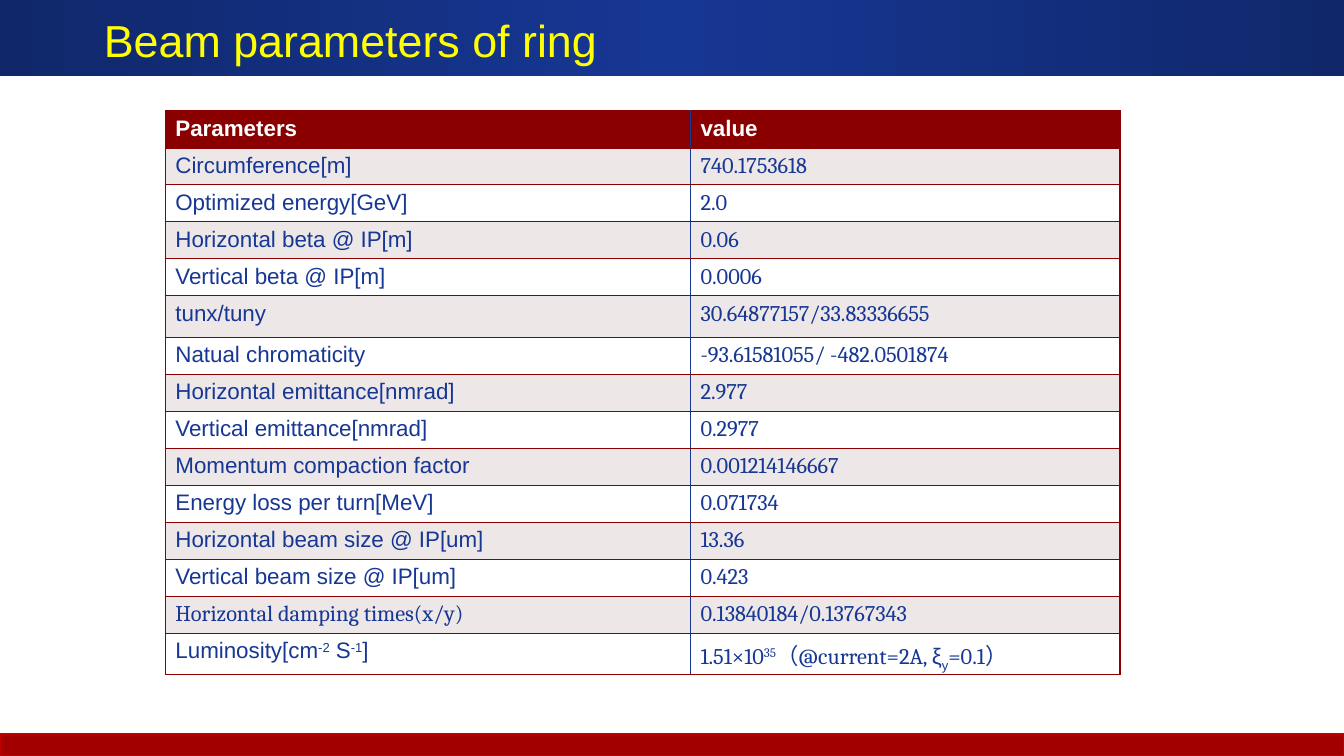
from copy import deepcopy
from dataclasses import dataclass

from lxml.etree import SubElement
from pptx import Presentation
from pptx.dml.color import RGBColor as Rgb
from pptx.enum.shapes import MSO_SHAPE as Preset
from pptx.enum.text import MSO_ANCHOR as Anchor, MSO_AUTO_SIZE as AutoSize, PP_ALIGN as Align
from pptx.oxml.ns import qn
from pptx.util import Inches, Pt


@dataclass(frozen=True)
class Theme:
    yellow: str = "FFFF00"
    white: str = "FFFFFF"
    blue: str = "163794"
    navy: str = "10276A"
    maroon: str = "8A0000"
    red: str = "A20000"
    red_edge: str = "C00000"
    stripe: str = "EDE7E7"
    sans: str = "Arial"
    serif: str = "Cambria"
    title_size: int = 32
    table_size: int = 16


THEME = Theme()
SUPER, SUB = 30, -25

# Each value is plain text or a list of (text, baseline percent, font) runs
PARAMETERS = [
    ("Circumference[m]", "740.1753618"),
    ("Optimized energy[GeV]", "2.0"),
    ("Horizontal beta @ IP[m]", "0.06"),
    ("Vertical beta @ IP[m]", "0.0006"),
    ("tunx/tuny", "30.64877157/33.83336655"),
    ("Natual chromaticity", "-93.61581055/ -482.0501874"),
    ("Horizontal emittance[nmrad]", "2.977"),
    ("Vertical emittance[nmrad]", "0.2977"),
    ("Momentum compaction factor", "0.001214146667"),
    ("Energy loss per turn[MeV]", "0.071734"),
    ("Horizontal beam size @ IP[um]", "13.36"),
    ("Vertical beam size @ IP[um]", "0.423"),
    ([("Horizontal damping times(x/y)", 0, THEME.serif)], "0.13840184/0.13767343"),
    ([("Luminosity[cm", 0, None), ("-2", SUPER, None), (" S", 0, None),
      ("-1", SUPER, None), ("]", 0, None)],
     [("1.51×10", 0, None), ("35", SUPER, None), ("（@current=2A, ", 0, None),
      ("ξ", 0, THEME.sans), ("y", SUB, THEME.sans), ("=0.1）", 0, None)]),
]
TUNE_ROW = 5  # slightly taller than the others


class SlideBuilder:
    def __init__(self, deck, theme):
        self.theme = theme
        self.width, self.height = deck.slide_width, deck.slide_height
        self.slide = deck.slides.add_slide(deck.slide_layouts[5])

    def area(self, left, top, width, height):
        """Turn percentages of the slide into lengths."""
        return [int(share * full / 100) for share, full in
                zip((left, top, width, height), (self.width, self.height) * 2)]

    def style(self, paragraph, size, color, font, bold=False):
        paragraph.alignment = Align.LEFT
        paragraph.font.size = Pt(size)
        paragraph.font.name = font
        paragraph.font.bold = bold
        paragraph.font.color.rgb = Rgb.from_string(color)

    def title(self, text, *area):
        heading = self.slide.shapes.title
        heading.left, heading.top, heading.width, heading.height = self.area(*area)
        frame = heading.text_frame
        frame.text = text
        frame.word_wrap = False
        frame.auto_size = AutoSize.SHAPE_TO_FIT_TEXT
        frame.vertical_anchor = Anchor.MIDDLE
        self.style(frame.paragraphs[0], self.theme.title_size, self.theme.yellow, self.theme.sans)

    def band(self, *area):
        """Add a plain full-width band behind everything else."""
        band = self.slide.shapes.add_shape(Preset.RECTANGLE, *self.area(*area))
        band.shadow.inherit = False
        self.slide.shapes.element.insert(2, band.element)
        return band

    def gradient_band(self, edge, middle, *area):
        band = self.band(*area)
        band.line.fill.background()
        band.fill.gradient()
        band.fill.gradient_angle = 0
        stop_list = band.element.spPr.find(".//" + qn("a:gsLst"))
        stop_list.insert(1, deepcopy(stop_list[0]))
        for stop, position, color in zip(band.fill.gradient_stops, (0, 0.5, 1), (edge, middle, edge)):
            stop.position = position
            stop.color.rgb = Rgb.from_string(color)

    def solid_band(self, color, edge, *area):
        band = self.band(*area)
        band.fill.solid()
        band.fill.fore_color.rgb = Rgb.from_string(color)
        band.line.color.rgb = Rgb.from_string(edge)
        band.line.width = Pt(1.5)

    def borders(self, cell, column):
        """Maroon outside and between rows, blue between the two columns."""
        inner = "a:lnR" if column == 0 else "a:lnL"
        properties = cell._tc.get_or_add_tcPr()
        for side in ("a:lnL", "a:lnR", "a:lnT", "a:lnB"):
            line = SubElement(properties, qn(side), w=str(Pt(1)))
            color = self.theme.blue if side == inner else self.theme.maroon
            SubElement(SubElement(line, qn("a:solidFill")), qn("a:srgbClr"), val=color)

    def cell(self, cell, column, content, fill, color, font, bold=False):
        self.borders(cell, column)
        cell.fill.solid()
        cell.fill.fore_color.rgb = Rgb.from_string(fill)
        paragraph = cell.text_frame.paragraphs[0]
        self.style(paragraph, self.theme.table_size, color, font, bold)
        runs = [(content, 0, None)] if isinstance(content, str) else content
        for text, baseline, run_font in runs:
            run = paragraph.add_run()
            run.text = text
            if run_font:
                run.font.name = run_font
            if baseline:
                run._r.get_or_add_rPr().set("baseline", str(baseline * 1000))

    def table(self, header, rows, column_shares, tall_row, tall_share, *area):
        theme = self.theme
        left, top, width, height = self.area(*area)
        table = self.slide.shapes.add_table(len(rows) + 1, len(header), left, top, width, height).table
        for column, share in zip(table.columns, column_shares):
            column.width = int(width * share)
        tall = int(height * tall_share)
        for index, row in enumerate(table.rows):
            row.height = tall if index == tall_row else (height - tall) // len(rows)
        for column, label in enumerate(header):
            self.cell(table.cell(0, column), column, label, theme.maroon, theme.white, theme.sans, True)
        for index, entry in enumerate(rows, 1):
            fill = theme.stripe if index % 2 else theme.white
            for column, (content, font) in enumerate(zip(entry, (theme.sans, theme.serif))):
                self.cell(table.cell(index, column), column, content, fill, theme.blue, font)


def main():
    deck = Presentation()
    deck.slide_width, deck.slide_height = Inches(13.33), Inches(7.5)
    page = SlideBuilder(deck, THEME)

    # Header and footer bands
    page.gradient_band(THEME.navy, THEME.blue, 0, 0, 100, 10.1)
    page.solid_band(THEME.red, THEME.red_edge, 0, 97.07, 100, 2.93)

    # Title
    page.title("Beam parameters of ring", 6.98, 0.93, 38.48, 8.53)

    # Parameter table
    page.table(("Parameters", "value"), PARAMETERS, (0.55, 0.45), TUNE_ROW, 0.075,
               12.3, 14.67, 71.04, 74)

    deck.save("out.pptx")


if __name__ == "__main__":
    main()
